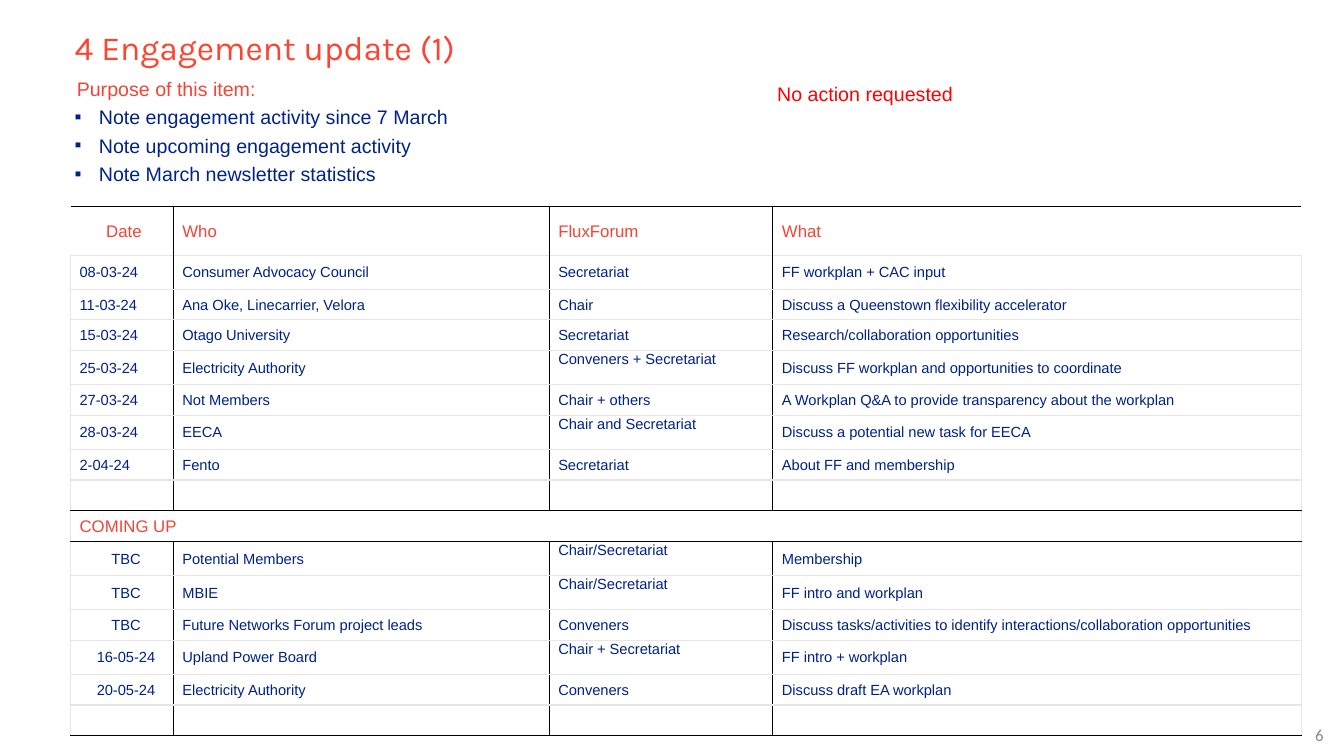
from lxml import etree
from pptx import Presentation
from pptx.dml.color import RGBColor
from pptx.enum.text import MSO_ANCHOR, MSO_AUTO_SIZE, PP_ALIGN
from pptx.oxml.ns import qn
from pptx.util import Pt

LEFT, CENTER, RIGHT = PP_ALIGN.LEFT, PP_ALIGN.CENTER, PP_ALIGN.RIGHT
TOP, MIDDLE = MSO_ANCHOR.TOP, MSO_ANCHOR.MIDDLE
FIXED = MSO_AUTO_SIZE.NONE

TITLE_RED = RGBColor(0xFF, 0x43, 0x31)
HEADING_RED = RGBColor(0xEF, 0x46, 0x37)
NOTICE_RED = RGBColor(0xFF, 0x00, 0x00)
BULLET_BLUE = RGBColor(0x00, 0x23, 0x87)
CELL_BLUE = RGBColor(0x00, 0x22, 0x86)
NUMBER_GREY = RGBColor(0x88, 0x88, 0x88)
BLACK = RGBColor(0x00, 0x00, 0x00)
PALE_GREY = RGBColor(0xE7, 0xE6, 0xE6)

# Content
TITLE = "4 Engagement update (1)"
PURPOSE_HEADING = "Purpose of this item:"
PURPOSES = [
    "Note engagement activity since 7 March",
    "Note upcoming engagement activity",
    "Note March newsletter statistics",
]
NOTICE = "No action requested"
PAGE_NUMBER = "6"

HEADER = ("Date", "Who", "FluxForum", "What")
BLANK = ("", "", "", "")
PAST = [
    ("08-03-24", "Consumer Advocacy Council", "Secretariat", "FF workplan + CAC input"),
    ("11-03-24", "Ana Oke, Linecarrier, Velora", "Chair",
     "Discuss a Queenstown flexibility accelerator"),
    ("15-03-24", "Otago University", "Secretariat", "Research/collaboration opportunities"),
    ("25-03-24", "Electricity Authority", "Conveners + Secretariat",
     "Discuss FF workplan and opportunities to coordinate"),
    ("27-03-24", "Not Members", "Chair + others",
     "A Workplan Q&A to provide transparency about the workplan"),
    ("28-03-24", "EECA", "Chair and Secretariat", "Discuss a potential new task for EECA"),
    ("2-04-24", "Fento", "Secretariat", "About FF and membership"),
    BLANK,
]
COMING_UP = ("COMING UP", "", "", "")
UPCOMING = [
    ("TBC", "Potential Members", "Chair/Secretariat", "Membership"),
    ("TBC", "MBIE", "Chair/Secretariat", "FF intro and workplan"),
    ("TBC", "Future Networks Forum project leads", "Conveners",
     "Discuss tasks/activities to identify interactions/collaboration opportunities"),
    ("16-05-24", "Upland Power Board", "Chair + Secretariat", "FF intro + workplan"),
    ("20-05-24", "Electricity Authority", "Conveners", "Discuss draft EA workplan"),
    BLANK,
]
ROWS = [HEADER, *PAST, COMING_UP, *UPCOMING]
SECTION_ROW = ROWS.index(COMING_UP)
LAST_ROW, LAST_COL = len(ROWS) - 1, len(HEADER) - 1
RAISED_ROLES = {"Conveners + Secretariat", "Chair and Secretariat",
                "Chair/Secretariat", "Chair + Secretariat"}

# Layout, in points
TABLE_LEFT, TABLE_TOP = 50.4, 147.5
COLUMN_WIDTHS = (73.4, 268.5, 159.8, 377.3)
HEADER_HEIGHT, TALL_HEIGHT, ROW_HEIGHT = 34.8, 24.3, 21.95


def style(paragraph, size, color, font="Arial", align=LEFT, margin=5.8, hanging=0):
    paragraph.alignment = align
    properties = paragraph._p.get_or_add_pPr()
    properties.set("marL", str(Pt(margin)))
    properties.set("indent", str(Pt(-hanging)))
    paragraph.font.size = Pt(size)
    paragraph.font.name = font
    paragraph.font.color.rgb = color
    paragraph.font.bold = False


def set_bullet(paragraph, char=None):
    properties = paragraph._p.get_or_add_pPr()
    if char is None:
        etree.SubElement(properties, qn("a:buNone"))
        return
    color = etree.SubElement(properties, qn("a:buClr"))
    etree.SubElement(color, qn("a:srgbClr"), val=str(BULLET_BLUE))
    etree.SubElement(properties, qn("a:buFont"), typeface="Arial")
    etree.SubElement(properties, qn("a:buChar"), char=char)


def place(shape, left, top, width, height):
    shape.left, shape.top = Pt(left), Pt(top)
    shape.width, shape.height = Pt(width), Pt(height)


def add_label(text, box, anchor, inset, **look):
    frame = slide.shapes.add_textbox(*map(Pt, box)).text_frame
    frame.word_wrap = True
    frame.vertical_anchor = anchor
    frame.margin_top = frame.margin_bottom = Pt(inset)
    frame.text = text
    style(frame.paragraphs[0], **look)
    return frame.paragraphs[0]


def set_borders(cell, borders):
    """Borders come as (color, width) for left, right, top, bottom."""
    properties = cell._tc.get_or_add_tcPr()
    for position, (side, border) in enumerate(zip("LRTB", borders)):
        color, width = border or (None, 0)
        line = etree.Element(qn(f"a:ln{side}"), w=str(Pt(width)))
        if color is None:
            etree.SubElement(line, qn("a:noFill"))
        else:
            fill = etree.SubElement(line, qn("a:solidFill"))
            etree.SubElement(fill, qn("a:srgbClr"), val=str(color))
        properties.insert(position, line)


def borders_of(row, col):
    width = 1 if row == 0 else 0.75
    outer = None if row == 0 else (PALE_GREY, width)
    inner = outer if row == SECTION_ROW else (BLACK, width)
    strong = {0, SECTION_ROW, SECTION_ROW + 1, LAST_ROW + 1}
    top, bottom = ((BLACK if edge in strong else PALE_GREY, 1) for edge in (row, row + 1))
    return (outer if col == 0 else inner, outer if col == LAST_COL else inner, top, bottom)


def height_of(row):
    if row == 0:
        return HEADER_HEIGHT
    return TALL_HEIGHT if row == 1 or ROWS[row][2] in RAISED_ROLES else ROW_HEIGHT


prs = Presentation()
prs.slide_width, prs.slide_height = Pt(960), Pt(540)
slide = prs.slides.add_slide(prs.slide_layouts[1])

# Title
title = slide.shapes.title
place(title, 40.3, 8.6, 878.4, 53.3)
title.text_frame.text = TITLE
title.text_frame.auto_size = FIXED
title.text_frame.vertical_anchor = MIDDLE
title.text_frame.paragraphs[0].line_spacing = 0.9
style(title.text_frame.paragraphs[0], 24, TITLE_RED, "Karla")

# Purpose list
purpose = slide.placeholders[1]
place(purpose, 41.8, 51.1, 859, 86.4)
purpose.text_frame.text = "\n".join([PURPOSE_HEADING, *PURPOSES])
purpose.text_frame.auto_size = FIXED
heading, *bullets = purpose.text_frame.paragraphs
heading.space_before = Pt(0)
set_bullet(heading)
style(heading, 14, HEADING_RED)
for bullet in bullets:
    bullet.space_before = Pt(3.5)
    set_bullet(bullet, "▪")
    style(bullet, 14, BULLET_BLUE, margin=21.6, hanging=17.3)

# Engagement table
table = slide.shapes.add_table(
    len(ROWS), len(HEADER), Pt(TABLE_LEFT), Pt(TABLE_TOP), Pt(sum(COLUMN_WIDTHS)),
    Pt(sum(height_of(row) for row in range(len(ROWS))))).table
table.first_row = table.horz_banding = False
for column, width in zip(table.columns, COLUMN_WIDTHS):
    column.width = Pt(width)
for r, entries in enumerate(ROWS):
    table.rows[r].height = Pt(height_of(r))
    is_heading = r in (0, SECTION_ROW)
    for c, entry in enumerate(entries):
        cell = table.cell(r, c)
        cell.text = entry
        cell.fill.background()
        cell.vertical_anchor = TOP if entry in RAISED_ROLES else MIDDLE
        cell.margin_left = cell.margin_right = cell.margin_top = Pt(0.7)
        cell.margin_bottom = Pt(0)
        centered = c == 0 and (r == 0 or r > SECTION_ROW)
        style(cell.text_frame.paragraphs[0], 12 if is_heading else 10.5,
              HEADING_RED if is_heading else CELL_BLUE,
              align=CENTER if centered else LEFT, margin=2.9 if r == c == 0 else 5.8)
        set_borders(cell, borders_of(r, c))
table.cell(SECTION_ROW, 0).merge(table.cell(SECTION_ROW, LAST_COL))

# Notice and page number
notice = add_label(NOTICE, (542.2, 51.1, 387.4, 31.7), TOP, 7.2, size=14, color=NOTICE_RED)
notice.space_before = Pt(6)
add_label(PAGE_NUMBER, (907.2, 510.5, 45.4, 28.8), MIDDLE, 3.6, size=12,
          color=NUMBER_GREY, font="Calibri", align=RIGHT, margin=0)

prs.save("out.pptx")
